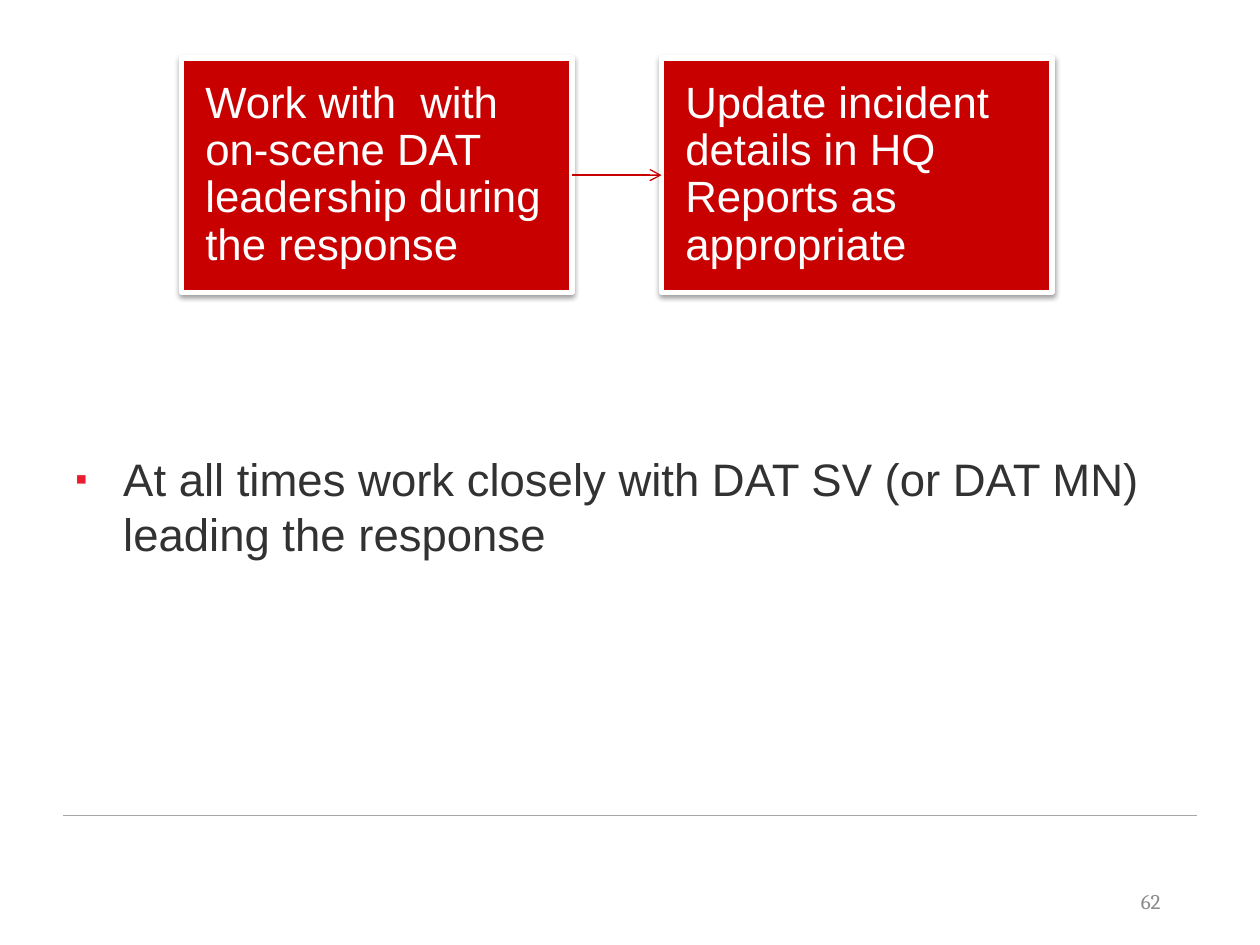
from lxml.etree import SubElement
from pptx import Presentation
from pptx.dml.color import RGBColor
from pptx.enum.shapes import MSO_CONNECTOR as Connector, MSO_SHAPE as Shape
from pptx.enum.text import MSO_ANCHOR as Anchor, PP_ALIGN as Align
from pptx.oxml import parse_xml
from pptx.oxml.ns import nsdecls, qn
from pptx.util import Inches, Pt

# Content
STEPS = [
    "Work with  with on-scene DAT leadership during the response",
    "Update incident details in HQ Reports as appropriate",
]
REMINDER = "At all times work closely with DAT SV (or DAT MN) leading the response"
PAGE_NUMBER = "62"

THEME = {
    "red": "C80000", "bullet": "ED1B2E", "white": "FFFFFF",
    "ink": "313231", "rule": "A6A6A6", "muted": "8C8C8C",
    "body_font": "Arial", "number_font": "Cambria",
    "step_size": 25, "body_size": 26, "number_size": 12,
}

# Layout in inches
WIDTH, HEIGHT = 10, 7.5
MARGIN = WIDTH * 0.05
STEP_LEFT, STEP_TOP, STEP_WIDTH, STEP_HEIGHT = 1.44, 0.46, 3.1, 1.86
STEP_PITCH = 3.81
STEP_INSET = 0.19
RULE_TOP = 6.47
INDENT = 0.38


def color(name):
    return RGBColor.from_string(THEME[name])


def write(box, text, kind, tint):
    frame = box.text_frame
    frame.word_wrap = True
    frame.text = text
    para = frame.paragraphs[0]
    for span in para.runs:
        span.font.name = THEME["number_font" if kind == "number" else "body_font"]
        span.font.size = Pt(THEME[kind + "_size"])
        span.font.color.rgb = color(tint)
    return frame, para


def add_text(page, left, top, width, height, text, kind, tint):
    box = page.shapes.add_textbox(*map(Inches, (left, top, width, height)))
    return write(box, text, kind, tint)


def add_step(page, index, text):
    left = STEP_LEFT + index * STEP_PITCH
    box = page.shapes.add_shape(
        Shape.RECTANGLE, *map(Inches, (left, STEP_TOP, STEP_WIDTH, STEP_HEIGHT)))
    box.fill.solid()
    box.fill.fore_color.rgb = color("red")
    box.line.color.rgb = color("white")
    box.line.width = Pt(3)
    box.shadow.inherit = False
    effects = box._element.spPr.find(qn("a:effectLst"))
    effects.append(parse_xml(
        f'<a:outerShdw {nsdecls("a")} blurRad="{Pt(3.1)}" dist="{Pt(1.6)}" '
        'dir="5400000" rotWithShape="0"><a:srgbClr val="000000">'
        '<a:alpha val="38000"/></a:srgbClr></a:outerShdw>'))
    frame, para = write(box, text, "step", "white")
    frame.vertical_anchor = Anchor.MIDDLE
    frame.margin_left = frame.margin_right = Inches(STEP_INSET)
    frame.margin_top = frame.margin_bottom = Inches(STEP_INSET)
    para.alignment = Align.LEFT
    para.line_spacing = 0.9
    return box


def add_line(page, start, end, tint):
    line = page.shapes.add_connector(
        Connector.STRAIGHT, *map(Inches, (*start, *end)))
    line.line.color.rgb = color(tint)
    line.line.width = Pt(0.75)
    SubElement(line._element.spPr, qn("a:effectLst"))
    return line


def add_bullet(para):
    props = para._p.get_or_add_pPr()
    props.set("marL", str(Inches(INDENT)))
    props.set("indent", str(-Inches(INDENT)))
    tint = SubElement(props, qn("a:buClr"))
    SubElement(tint, qn("a:srgbClr"), val=THEME["bullet"])
    SubElement(props, qn("a:buSzPct"), val="75000")
    SubElement(props, qn("a:buFont"), typeface=THEME["body_font"])
    SubElement(props, qn("a:buChar"), char="▪")


def main():
    deck = Presentation()
    deck.slide_width, deck.slide_height = Inches(WIDTH), Inches(HEIGHT)
    page = deck.slides.add_slide(deck.slide_layouts[6])

    # Footer rule
    add_line(page, (MARGIN, RULE_TOP), (WIDTH - MARGIN, RULE_TOP), "rule")

    # Reminder
    _, para = add_text(page, MARGIN, 3.53, WIDTH - 2 * MARGIN, 3.82,
                       REMINDER, "body", "ink")
    add_bullet(para)

    # Process steps, joined by arrows
    boxes = [add_step(page, index, text) for index, text in enumerate(STEPS)]
    for before, after in zip(boxes, boxes[1:]):
        arrow = add_line(page, (0, 0), (1, 0), "red")
        arrow.begin_connect(before, 3)
        arrow.end_connect(after, 1)
        SubElement(arrow.line._get_or_add_ln(), qn("a:tailEnd"), type="arrow")

    # Page number
    frame, para = add_text(page, 7.06, 6.95, 2.25, 0.4,
                           PAGE_NUMBER, "number", "muted")
    frame.vertical_anchor = Anchor.MIDDLE
    para.alignment = Align.RIGHT

    deck.save("out.pptx")


if __name__ == "__main__":
    main()
